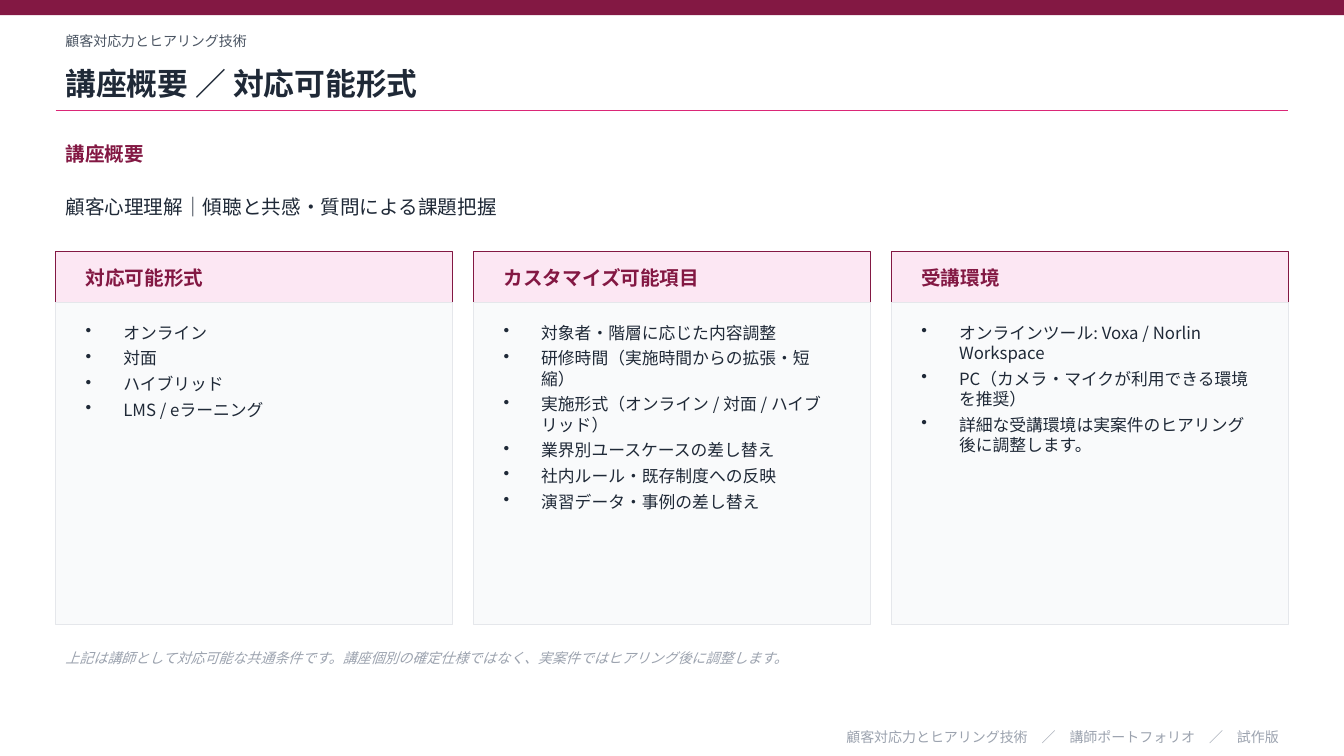
from lxml.etree import SubElement
from pptx import Presentation
from pptx.dml.color import RGBColor
from pptx.enum.shapes import MSO_CONNECTOR, MSO_SHAPE
from pptx.enum.text import MSO_ANCHOR, PP_ALIGN
from pptx.oxml.ns import qn
from pptx.util import Cm, Pt

WINE = RGBColor(0x83, 0x18, 0x43)
PINK = RGBColor(0xDB, 0x27, 0x77)
BLUSH = RGBColor(0xFC, 0xE7, 0xF3)
INK = RGBColor(0x1F, 0x29, 0x37)
SLATE = RGBColor(0x4B, 0x55, 0x63)
GREY = RGBColor(0x9C, 0xA3, 0xAF)
BORDER = RGBColor(0xE5, 0xE7, 0xEB)
PANEL = RGBColor(0xF9, 0xFA, 0xFB)

# Layout in centimetres
PAGE_W, PAGE_H = 33.87, 19.05
LEFT, WIDTH = 1.4, 31.07
CARD_W, CARD_TOP, HEAD_H, BODY_H = 10.01, 6.35, 1.27, 8.13
PAD = 0.51

COURSE = "顧客対応力とヒアリング技術"
CARDS = [
    ("対応可能形式", ["オンライン", "対面", "ハイブリッド", "LMS / eラーニング"]),
    ("カスタマイズ可能項目", [
        "対象者・階層に応じた内容調整",
        "研修時間（実施時間からの拡張・短縮）",
        "実施形式（オンライン / 対面 / ハイブリッド）",
        "業界別ユースケースの差し替え",
        "社内ルール・既存制度への反映",
        "演習データ・事例の差し替え",
    ]),
    ("受講環境", [
        "オンラインツール: Voxa / Norlin Workspace",
        "PC（カメラ・マイクが利用できる環境を推奨）",
        "詳細な受講環境は実案件のヒアリング後に調整します。",
    ]),
]


def write(p, text, font, size=12, color=INK, bold=False, italic=False):
    """Add one formatted run, with the font set for Japanese text too."""
    r = p.add_run()
    r.text = text
    r.font.name = font
    r.font.size = Pt(size)
    r.font.bold = bold
    r.font.italic = italic
    r.font.color.rgb = color
    SubElement(r.font._element, qn("a:ea"), typeface=font)


class Deck:
    font = "Noto Sans CJK JP"

    def __init__(self, prs):
        self.s = prs.slides.add_slide(prs.slide_layouts[6])

    def rect(self, x, y, w, h, fill, line=None):
        sp = self.s.shapes.add_shape(MSO_SHAPE.RECTANGLE, Cm(x), Cm(y), Cm(w), Cm(h))
        sp.shadow.inherit = False
        sp.fill.solid()
        sp.fill.fore_color.rgb = fill
        if line is None:
            sp.line.fill.background()
        else:
            sp.line.color.rgb = line
            sp.line.width = Pt(0.75)

    def rule(self, x, y, w, color):
        line = self.s.shapes.add_connector(
            MSO_CONNECTOR.STRAIGHT, Cm(x), Cm(y), Cm(x + w), Cm(y))
        line.line.color.rgb = color
        line.line.width = Pt(1)
        SubElement(line._element.spPr, qn("a:effectLst"))

    def box(self, x, y, w, h, anchor):
        tf = self.s.shapes.add_textbox(Cm(x), Cm(y), Cm(w), Cm(h)).text_frame
        tf.word_wrap = True
        tf.vertical_anchor = anchor
        return tf

    def label(self, text, x, y, w, h, align=PP_ALIGN.LEFT, **style):
        p = self.box(x, y, w, h, MSO_ANCHOR.MIDDLE).paragraphs[0]
        p.alignment = align
        write(p, text, self.font, **style)

    def bullets(self, items, x, y, w, h):
        tf = self.box(x, y, w, h, MSO_ANCHOR.TOP)
        for i, item in enumerate(items):
            p = tf.add_paragraph() if i else tf.paragraphs[0]
            pPr = p._p.get_or_add_pPr()
            pPr.set("marL", str(Cm(0.95)))
            pPr.set("indent", str(-Cm(0.95)))
            SubElement(pPr, qn("a:buChar"), char="•")
            p.space_after = Pt(4)
            write(p, item, self.font)

    def card(self, x, title, items):
        body_top = CARD_TOP + HEAD_H
        inner = CARD_W - 2 * PAD
        self.rect(x, CARD_TOP, CARD_W, HEAD_H, BLUSH, WINE)
        self.label(title, x + PAD, CARD_TOP, inner, HEAD_H,
                   size=14, color=WINE, bold=True)
        self.rect(x, body_top, CARD_W, BODY_H, PANEL, BORDER)
        self.bullets(items, x + PAD, body_top + 0.38, inner, 7.24)


def main():
    prs = Presentation()
    prs.slide_width, prs.slide_height = Cm(PAGE_W), Cm(PAGE_H)
    deck = Deck(prs)

    # Header
    deck.rect(0, 0, PAGE_W, 0.38, WINE)
    deck.label(COURSE, LEFT, 0.64, WIDTH, 0.76, size=10, color=SLATE)
    deck.label("講座概要 ／ 対応可能形式", LEFT, 1.4, WIDTH, 1.4, size=22, bold=True)
    deck.rule(LEFT, 2.79, WIDTH, PINK)

    # Course outline
    deck.label("講座概要", LEFT, 3.43, WIDTH, 0.89, size=14, color=WINE, bold=True)
    deck.label("顧客心理理解｜傾聴と共感・質問による課題把握",
               LEFT, 4.45, WIDTH, 1.52, size=14)

    # Cards spread evenly over the content width
    step = (WIDTH - CARD_W) / (len(CARDS) - 1)
    for i, (title, items) in enumerate(CARDS):
        deck.card(LEFT + i * step, title, items)

    # Note and footer
    deck.label("上記は講師として対応可能な共通条件です。講座個別の確定仕様ではなく、"
               "実案件ではヒアリング後に調整します。",
               LEFT, 16.13, WIDTH, 0.89, size=10, color=GREY, italic=True)
    deck.label(f"{COURSE}　／　講師ポートフォリオ　／　試作版",
               LEFT, 18.29, WIDTH, 0.56, PP_ALIGN.RIGHT, size=10, color=GREY)

    prs.save("out.pptx")


if __name__ == "__main__":
    main()
